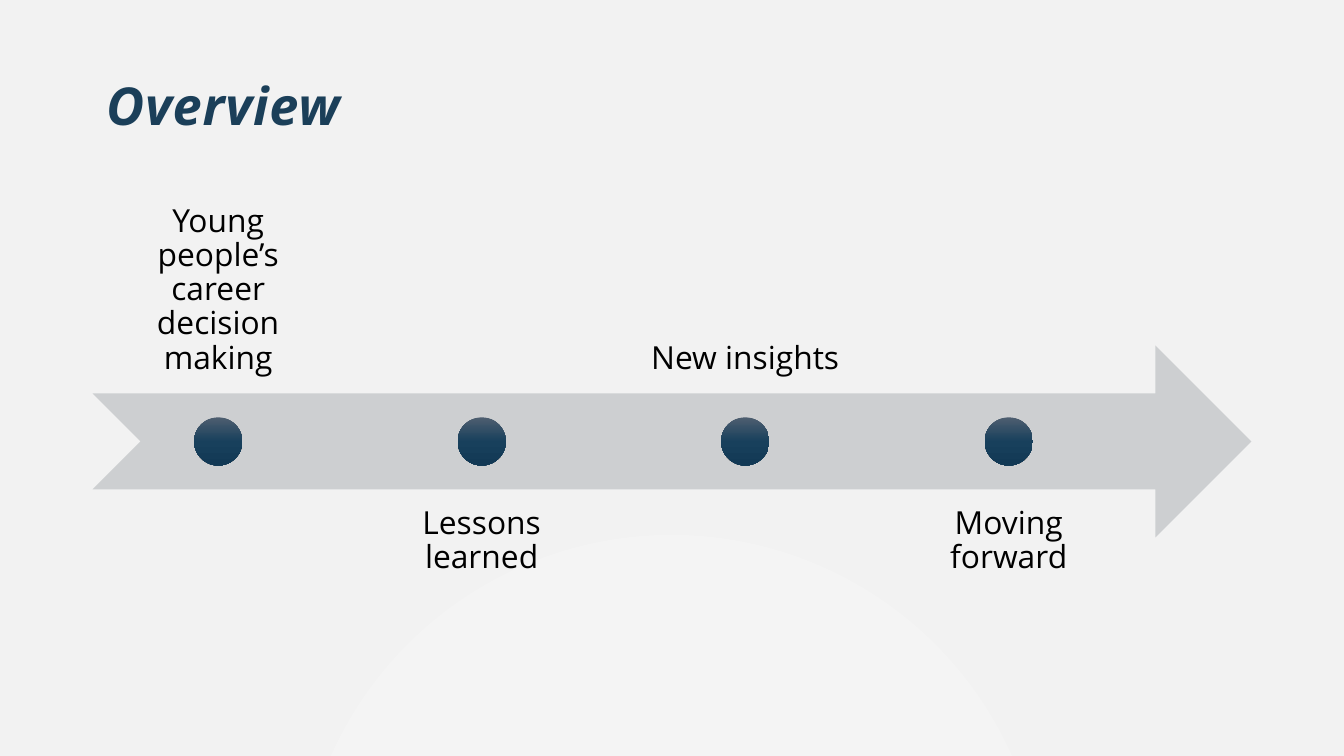
"""Build the overview slide with a four-step timeline arrow."""
import dataclasses

import pptx
import pptx.dml.color
import pptx.enum.shapes
import pptx.enum.text
import pptx.oxml
import pptx.oxml.ns
import pptx.util

Cm = pptx.util.Cm
Shape = pptx.enum.shapes.MSO_SHAPE
Anchor = pptx.enum.text.MSO_ANCHOR


@dataclasses.dataclass(frozen=True)
class Theme:
    font: str = "Open Sans"
    background: str = "F2F2F2"
    halo: str = "F4F4F4"
    arrow: str = "CDCFD1"
    title: str = "1B3F59"
    text: str = "000000"
    dot_stops: tuple = ((0, "4E5E70"), (50, "18405C"), (100, "123955"))
    title_size: int = 28
    label_size: int = 17
    line_spacing: float = 0.9
    label_inset: float = 0.33


class SlideBuilder:
    def __init__(self, slide, theme):
        self.slide = slide
        self.theme = theme
        self.paint(slide.background.fill, theme.background)

    def paint(self, fill, color):
        fill.solid()
        fill.fore_color.rgb = pptx.dml.color.RGBColor.from_string(color)

    def format_text(self, paragraph, size, color):
        paragraph.line_spacing = self.theme.line_spacing
        font = paragraph.font
        font.name = self.theme.font
        font.size = pptx.util.Pt(size)
        font.color.rgb = pptx.dml.color.RGBColor.from_string(color)
        return font

    def title(self, text, left, top, width, height):
        shape = self.slide.shapes.title
        shape.left, shape.top = Cm(left), Cm(top)
        shape.width, shape.height = Cm(width), Cm(height)
        frame = shape.text_frame
        frame.text = text
        frame.auto_size = pptx.enum.text.MSO_AUTO_SIZE.NONE
        frame.vertical_anchor = Anchor.BOTTOM
        paragraph = frame.paragraphs[0]
        paragraph.alignment = pptx.enum.text.PP_ALIGN.LEFT
        font = self.format_text(paragraph, self.theme.title_size, self.theme.title)
        font.bold = font.italic = True
        paragraph.runs[0].font._rPr.set("spc", "50")

    def shape(self, kind, left, top, width, height, color=None):
        shape = self.slide.shapes.add_shape(kind, Cm(left), Cm(top), Cm(width), Cm(height))
        shape.shadow.inherit = False
        shape.line.fill.background()
        if color:
            self.paint(shape.fill, color)
        return shape

    def dot(self, left, top, size):
        shape = self.shape(Shape.OVAL, left, top, size, size)
        stops = "".join(
            f'<a:gs pos="{position * 1000}"><a:srgbClr val="{color}"/></a:gs>'
            for position, color in self.theme.dot_stops
        )
        gradient = pptx.oxml.parse_xml(
            f'<a:gradFill {pptx.oxml.ns.nsdecls("a")} rotWithShape="1">'
            f'<a:gsLst>{stops}</a:gsLst><a:lin ang="5400000" scaled="0"/></a:gradFill>'
        )
        shape._element.spPr.prstGeom.addnext(gradient)

    def label(self, text, left, top, width, height, anchor):
        box = self.slide.shapes.add_textbox(Cm(left), Cm(top), Cm(width), Cm(height))
        frame = box.text_frame
        frame.word_wrap = True
        frame.vertical_anchor = anchor
        inset = Cm(self.theme.label_inset)
        frame.margin_left = frame.margin_right = inset
        frame.margin_top = frame.margin_bottom = inset
        frame.text = text
        paragraph = frame.paragraphs[0]
        paragraph.alignment = pptx.enum.text.PP_ALIGN.CENTER
        self.format_text(paragraph, self.theme.label_size, self.theme.text)


def main():
    presentation = pptx.Presentation()
    presentation.slide_width, presentation.slide_height = Cm(25.4), Cm(14.29)
    theme = Theme()
    slide = presentation.slides.add_slide(presentation.slide_layouts[5])
    builder = SlideBuilder(slide, theme)

    left, width = 1.75, 21.9
    arrow_top, band = 6.53, 3.63
    label_width, pitch, dot_size = 4.75, 4.98, 0.91
    upper_top, lower_top = 3.81, 9.25
    dot_top = arrow_top + (band - dot_size) / 2

    builder.shape(Shape.OVAL, 5.64, 10.11, 14.1, 14.1, theme.halo)
    builder.title("Overview", left, 0.15, width, 2.57)
    builder.shape(Shape.NOTCHED_RIGHT_ARROW, left, arrow_top, width, band, theme.arrow)

    steps = (
        "Young people’s career decision making",
        "Lessons learned",
        "New insights",
        "Moving forward",
    )
    for index, step in enumerate(steps):
        label_left = left + index * pitch
        above = index % 2 == 0
        top = upper_top if above else lower_top
        anchor = Anchor.BOTTOM if above else Anchor.TOP
        builder.label(step, label_left, top, label_width, band, anchor)
        builder.dot(label_left + (label_width - dot_size) / 2, dot_top, dot_size)

    presentation.save("out.pptx")


if __name__ == "__main__":
    main()
